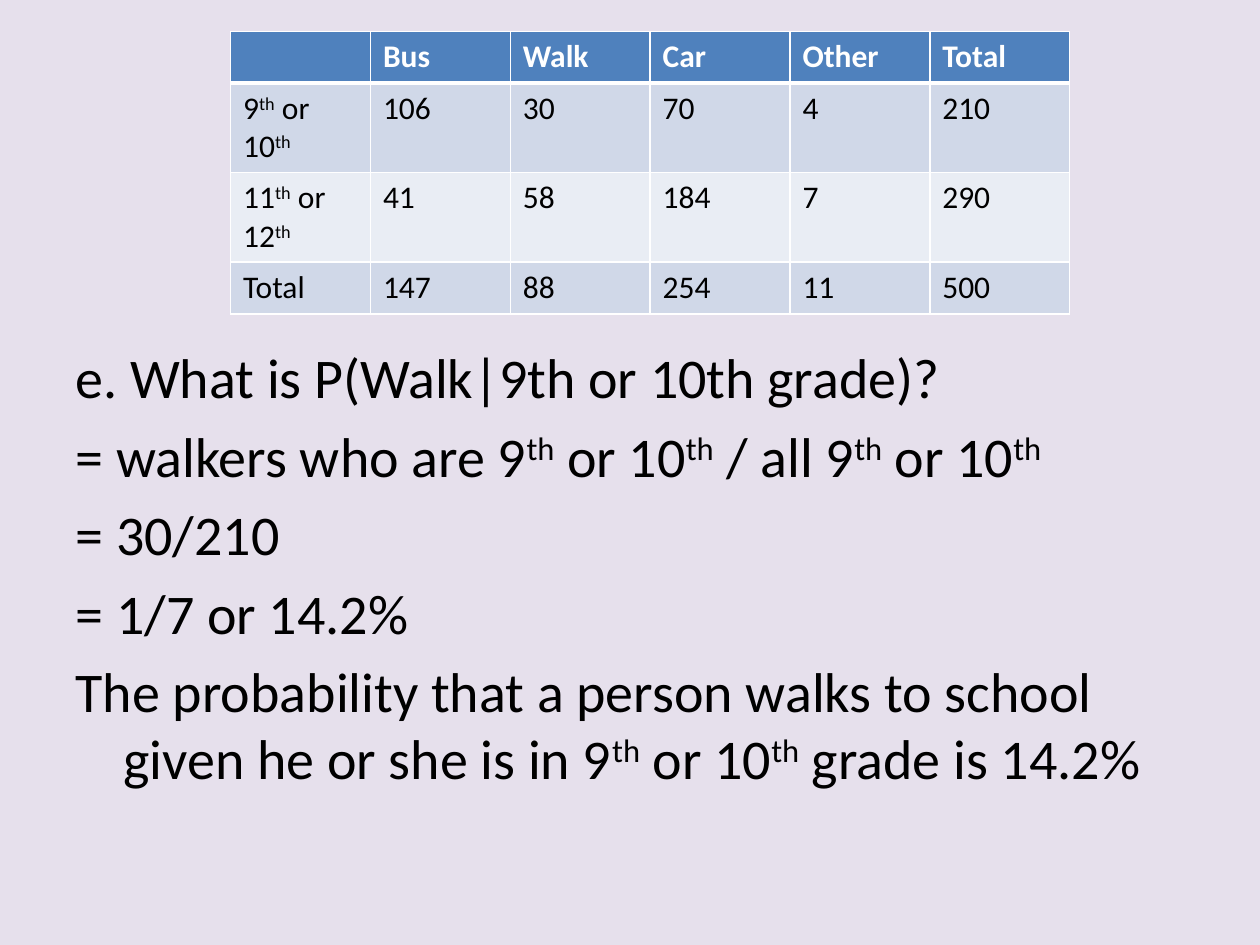
from dataclasses import dataclass

from lxml import etree
from pptx import Presentation
from pptx.dml.color import RGBColor
from pptx.oxml.ns import qn
from pptx.util import Inches, Pt

COLORS = {
    "background": "E6E0EC",
    "header": "4F81BD",
    "band_dark": "D0D8E8",
    "band_light": "E9EDF4",
    "white": "FFFFFF",
    "black": "000000",
}
FONT = "Calibri"
COLUMN_WIDTH = 1.11


@dataclass
class Row:
    cells: list[str]
    fill: str
    height: float = 0.41
    color: str = "black"
    bold: bool = False
    top: float = 1
    bottom: float = 1


ROWS = [
    Row(["", "Bus", "Walk", "Car", "Other", "Total"], "header",
        color="white", bold=True, bottom=3),
    Row(["9^th^ or 10^th^", "106", "30", "70", "4", "210"], "band_dark", 0.7, top=3),
    Row(["11^th^ or 12^th^", "41", "58", "184", "7", "290"], "band_light", 0.7),
    Row(["Total", "147", "88", "254", "11", "500"], "band_dark"),
]
SOLUTION = [
    "e. What is P(Walk|9th or 10th grade)?",
    "= walkers who are 9^th^ or 10^th^ / all 9^th^ or 10^th^",
    "= 30/210",
    "= 1/7 or 14.2%",
    "The probability that a person walks to school given he or she is in "
    "9^th^ or 10^th^ grade is 14.2%",
]


def rgb(name: str) -> RGBColor:
    return RGBColor.from_string(COLORS[name])


def write(p, text: str, size: float = 18, color: str = "black", bold: bool = False) -> None:
    for i, part in enumerate(text.split("^")):
        if not part:
            continue
        r = p.add_run()
        r.text = part
        r.font.name = FONT
        r.font.size = Pt(size)
        r.font.bold = bold
        r.font.color.rgb = rgb(color)
        if i % 2:
            r._r.get_or_add_rPr().set("baseline", "30000")


def border(cell, side: str, width: float) -> None:
    tc_pr = cell._tc.get_or_add_tcPr()
    ln = etree.SubElement(tc_pr, qn(f"a:ln{side}"), w=str(Pt(width)))
    fill = etree.SubElement(ln, qn("a:solidFill"))
    etree.SubElement(fill, qn("a:srgbClr"), val=COLORS["white"])


def draw_table(s, rows: list[Row], left: float, top: float) -> None:
    count = len(rows[0].cells)
    frame = s.shapes.add_table(
        len(rows), count, Inches(left), Inches(top),
        Inches(COLUMN_WIDTH * count), Inches(sum(row.height for row in rows)))
    table = frame.table
    for column in table.columns:
        column.width = Inches(COLUMN_WIDTH)
    for i, row in enumerate(rows):
        table.rows[i].height = Inches(row.height)
        for j, value in enumerate(row.cells):
            cell = table.cell(i, j)
            for side, width in (("L", 1), ("R", 1), ("T", row.top), ("B", row.bottom)):
                border(cell, side, width)
            cell.fill.solid()
            cell.fill.fore_color.rgb = rgb(row.fill)
            write(cell.text_frame.paragraphs[0], value, color=row.color, bold=row.bold)


def draw_solution(sp, lines: list[str]) -> None:
    sp.left, sp.top = Inches(0.5), Inches(2.67)
    sp.width, sp.height = Inches(9), Inches(4.5)
    tf = sp.text_frame
    for i, line in enumerate(lines):
        p = tf.add_paragraph() if i else tf.paragraphs[0]
        p_pr = p._p.get_or_add_pPr()
        p_pr.set("marL", str(Inches(0.38)))
        p_pr.set("indent", str(Inches(-0.38)))
        before = etree.SubElement(p_pr, qn("a:spcBef"))
        etree.SubElement(before, qn("a:spcPct"), val="20000")
        etree.SubElement(p_pr, qn("a:buNone"))
        write(p, line, size=32)


def main() -> None:
    prs = Presentation()
    prs.slide_width, prs.slide_height = Inches(10), Inches(7.5)
    s = prs.slides.add_slide(prs.slide_layouts[1])
    s.background.fill.solid()
    s.background.fill.fore_color.rgb = rgb("background")
    title = s.shapes.title._element
    title.getparent().remove(title)
    draw_solution(s.placeholders[1], SOLUTION)
    draw_table(s, ROWS, 1.83, 0.25)
    prs.save("out.pptx")


if __name__ == "__main__":
    main()
